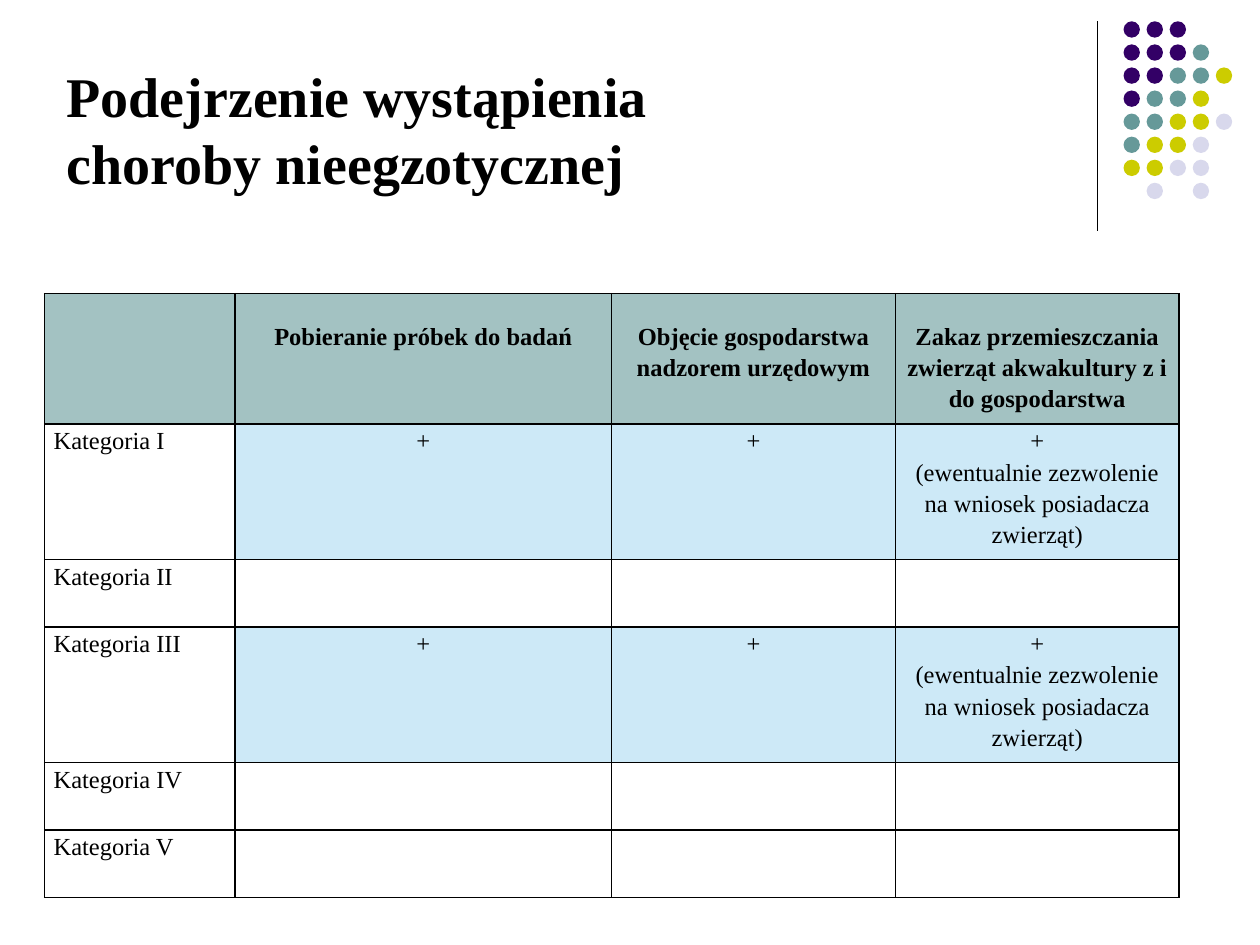
from lxml.etree import SubElement
from pptx import Presentation
from pptx.dml.color import RGBColor
from pptx.enum.shapes import MSO_CONNECTOR, MSO_SHAPE
from pptx.enum.text import MSO_ANCHOR, PP_ALIGN
from pptx.oxml import parse_xml
from pptx.oxml.ns import nsdecls, qn
from pptx.util import Cm, Pt

FONT = "Times New Roman"
BLACK = RGBColor(0x00, 0x00, 0x00)
PURPLE = RGBColor(0x33, 0x00, 0x66)
TEAL = RGBColor(0x66, 0x99, 0x99)
YELLOW = RGBColor(0xCC, 0xCC, 0x00)
LAVENDER = RGBColor(0xD8, 0xD8, 0xEC)
HEADER_FILL = RGBColor(0xA3, 0xC2, 0xC2)
MARKED_FILL = RGBColor(0xCD, 0xE9, 0xF7)

DOT_COLORS = {"P": PURPLE, "T": TEAL, "Y": YELLOW, "L": LAVENDER}
DOT_ROWS = ["PPP", "PPPT", "PPTTY", "PTTY", "TTYYL", "TYYL", "YYLL", " L L"]

HEADERS = ["", "Pobieranie próbek do badań", "Objęcie gospodarstwa nadzorem urzędowym",
           "Zakaz przemieszczania zwierząt akwakultury z i do gospodarstwa"]
REQUIRED = ["+", "+", "+\n(ewentualnie zezwolenie na wniosek posiadacza zwierząt)"]
NOT_REQUIRED = ["", "", ""]
ROWS = [
    HEADERS,
    ["Kategoria I", *REQUIRED],
    ["Kategoria II", *NOT_REQUIRED],
    ["Kategoria III", *REQUIRED],
    ["Kategoria IV", *NOT_REQUIRED],
    ["Kategoria V", *NOT_REQUIRED],
]
COLUMN_WIDTHS = [3.84, 7.59, 5.72, 5.72]
HEADER_HEIGHT, TALL_HEIGHT, SHORT_HEIGHT = Cm(2.63), Cm(2.73), Cm(1.36)


def set_font(para, size, bold):
    para.font.name = FONT
    para.font.size = Pt(size)
    para.font.bold = bold
    para.font.color.rgb = BLACK


def add_title(page, left, top, width, height):
    title = page.shapes.title
    title.left, title.top, title.width, title.height = left, top, width, height
    frame = title.text_frame
    frame.word_wrap = True
    frame.vertical_anchor = MSO_ANCHOR.MIDDLE
    frame.text = "Podejrzenie wystąpienia choroby nieegzotycznej"
    para = frame.paragraphs[0]
    para.alignment = PP_ALIGN.LEFT
    set_font(para, 32, True)


def add_ornament(page, left, top, width, height):
    """Vertical rule with a grid of coloured dots to its right."""
    rule = page.shapes.add_connector(MSO_CONNECTOR.STRAIGHT, left, top, left, top + height)
    rule.line.color.rgb = BLACK
    rule.line.width = Pt(0.75)
    SubElement(rule.element.spPr, qn("a:effectLst"))

    size = Cm(0.33)
    dots_left = left + Cm(0.53)
    pitch = (left + width - size - dots_left) / (max(map(len, DOT_ROWS)) - 1)
    dots = page.shapes.add_group_shape()
    for row, codes in enumerate(DOT_ROWS):
        for column, code in enumerate(codes):
            if code == " ":
                continue
            dot = dots.shapes.add_shape(
                MSO_SHAPE.OVAL, round(dots_left + column * pitch),
                round(top + row * pitch), size, size)
            dot.shadow.inherit = False
            dot.fill.solid()
            dot.fill.fore_color.rgb = DOT_COLORS[code]
            dot.line.fill.background()


def add_borders(cell):
    properties = cell._tc.get_or_add_tcPr()
    for side in ("lnL", "lnR", "lnT", "lnB"):
        properties.append(parse_xml(
            f'<a:{side} {nsdecls("a")} w="{Pt(1)}"><a:solidFill>'
            f'<a:srgbClr val="{BLACK}"/></a:solidFill></a:{side}>'))


def fill_cell(cell, text, is_header, is_label):
    cell.margin_left = cell.margin_right = Cm(0.18)
    cell.margin_top = Cm(0.52) if is_header else 0
    cell.margin_bottom = 0
    cell.text = text
    for para in cell.text_frame.paragraphs:
        para.alignment = PP_ALIGN.LEFT if is_label else PP_ALIGN.CENTER
        para.line_spacing = 1.15
        set_font(para, 14, is_header)
    add_borders(cell)
    if is_header or (text and not is_label):
        cell.fill.solid()
        cell.fill.fore_color.rgb = HEADER_FILL if is_header else MARKED_FILL
    else:
        cell.fill.background()


def add_category_table(page, left, top, width):
    heights = [HEADER_HEIGHT] + [TALL_HEIGHT if row[1] else SHORT_HEIGHT for row in ROWS[1:]]
    table = page.shapes.add_table(
        len(ROWS), len(HEADERS), left, top, width, sum(heights)).table
    table.first_row = table.horz_banding = False
    for column, share in zip(table.columns, COLUMN_WIDTHS):
        column.width = round(width * share / sum(COLUMN_WIDTHS))
    for row, (height, texts) in enumerate(zip(heights, ROWS)):
        table.rows[row].height = height
        for column, text in enumerate(texts):
            fill_cell(table.cell(row, column), text, row == 0, column == 0)


def main():
    deck = Presentation()
    deck.slide_width, deck.slide_height = Cm(25.4), Cm(19.05)
    page = deck.slides.add_slide(deck.slide_layouts[5])
    add_ornament(page, Cm(22.12), Cm(0.43), Cm(2.72), Cm(4.22))
    add_title(page, Cm(1.09), Cm(1.09), Cm(13.6), Cm(3))
    add_category_table(page, Cm(0.9), Cm(5.92), Cm(22.87))
    deck.save("out.pptx")


if __name__ == "__main__":
    main()
